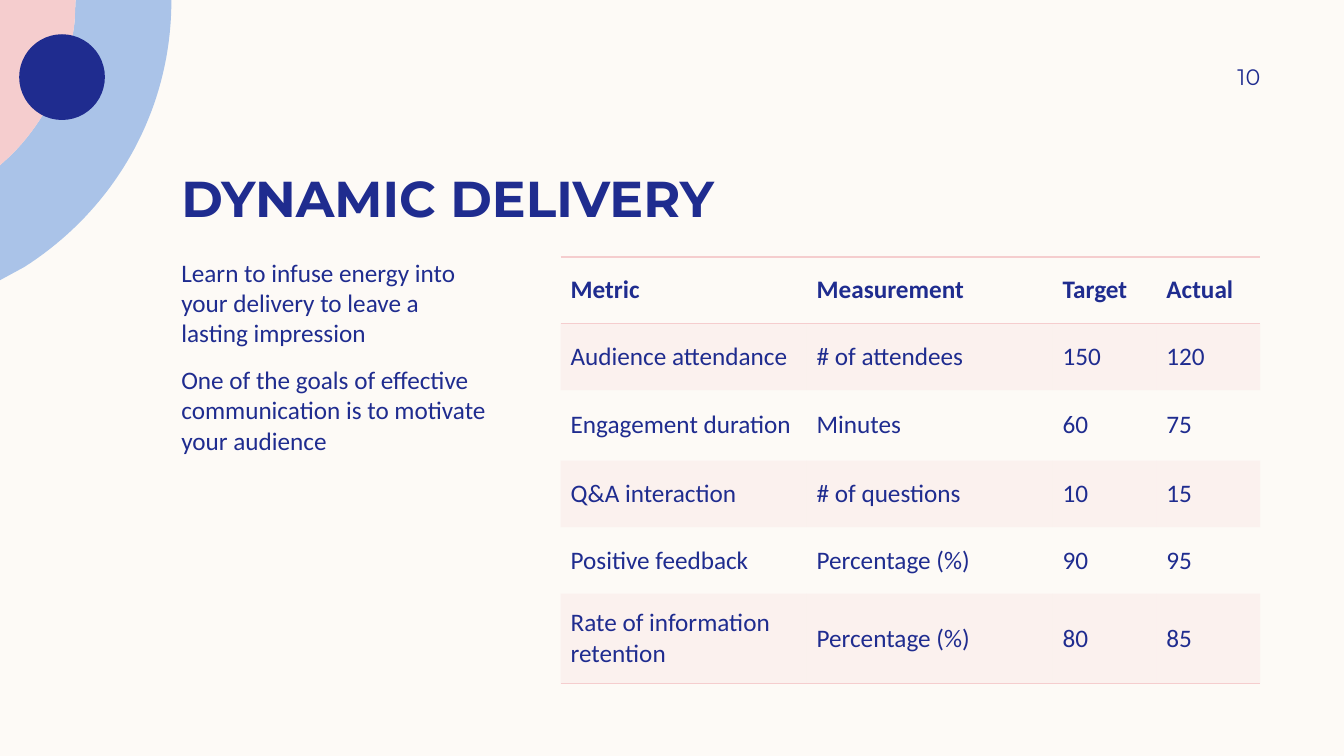
import pptx
import pptx.dml.color
import pptx.enum.shapes
import pptx.enum.text
import pptx.oxml
import pptx.oxml.ns
import pptx.util

Inches = pptx.util.Inches
Pt = pptx.util.Pt
RGBColor = pptx.dml.color.RGBColor
MSO_ANCHOR = pptx.enum.text.MSO_ANCHOR
PP_ALIGN = pptx.enum.text.PP_ALIGN

CREAM = RGBColor(0xFD, 0xFA, 0xF6)
NAVY = RGBColor(0x1F, 0x2C, 0x8F)
BLUE = RGBColor(0xAA, 0xC3, 0xE8)
PINK = RGBColor(0xF5, 0xCD, 0xCE)

TITLE = "DYNAMIC DELIVERY"
PAGE_NUMBER = "10"
BODY = [
    "Learn to infuse energy into your delivery to leave a lasting impression",
    "One of the goals of effective communication is to motivate your audience",
]
METRICS = [
    ("Metric", "Measurement", "Target", "Actual"),
    ("Audience attendance", "# of attendees", "150", "120"),
    ("Engagement duration", "Minutes", "60", "75"),
    ("Q&A interaction", "# of questions", "10", "15"),
    ("Positive feedback", "Percentage (%)", "90", "95"),
    ("Rate of information retention", "Percentage (%)", "80", "85"),
]
COLUMN_WIDTHS = [2.44, 2.44, 1.03, 1.03]
ROW_HEIGHTS = [0.66, 0.66, 0.7, 0.66, 0.66, 0.89]

OUTER_ARC = [(1.7, 0.01), (1.7, 1.12), (1.12, 2.09), (0.24, 2.65)]
INNER_ARC = [(0.74, 0.22), (0.68, 0.73), (0.46, 1.19), (0.11, 1.54)]
CURVE_STEPS = 40
NO_GRID_STYLE = "{2D5ABB26-0587-4C30-8999-92F81FD0307C}"


def curve_points(controls):
    points = []
    for step in range(CURVE_STEPS + 1):
        t = step / CURVE_STEPS
        weights = ((1 - t) ** 3, 3 * t * (1 - t) ** 2, 3 * t ** 2 * (1 - t), t ** 3)
        points.append(tuple(
            sum(weight * control[axis] for weight, control in zip(weights, controls))
            for axis in (0, 1)
        ))
    return points


def paint(shape, color):
    shape.shadow.inherit = False
    shape.fill.solid()
    shape.fill.fore_color.rgb = color
    shape.line.fill.background()


def add_outline(slide, points, color):
    corners = [(Inches(x), Inches(y)) for x, y in points]
    builder = slide.shapes.build_freeform(*corners[0])
    builder.add_line_segments(corners[1:], close=True)
    paint(builder.convert_to_shape(), color)


def add_run(paragraph, text, font, size, bold=False):
    run = paragraph.add_run()
    run.text = text
    run.font.name = font
    run.font.size = Pt(size)
    run.font.bold = bold
    run.font.color.rgb = NAVY


def add_text(slide, box, lines, font, size, bold=False, anchor=MSO_ANCHOR.TOP,
             align=PP_ALIGN.LEFT, space_after=0, right_inset=0.1):
    frame = slide.shapes.add_textbox(*map(Inches, box)).text_frame
    frame.word_wrap = True
    frame.vertical_anchor = anchor
    frame.margin_left, frame.margin_right = Inches(0.1), Inches(right_inset)
    frame.margin_top = frame.margin_bottom = 0
    for index, line in enumerate(lines):
        paragraph = frame.add_paragraph() if index else frame.paragraphs[0]
        paragraph.alignment = align
        paragraph.space_after = Pt(space_after)
        add_run(paragraph, line, font, size, bold)


def add_borders(cell, sides):
    properties = cell._tc.get_or_add_tcPr()
    for position, side in enumerate(sides):
        properties.insert(position, pptx.oxml.parse_xml(
            f'<a:ln{side} {pptx.oxml.ns.nsdecls("a")} w="12700"><a:solidFill>'
            f'<a:srgbClr val="{PINK}"/></a:solidFill></a:ln{side}>'
        ))


def fill_cell(cell, banded):
    if not banded:
        cell.fill.background()
        return
    cell.fill.solid()
    cell.fill.fore_color.rgb = PINK
    color = cell._tc.tcPr.find(".//" + pptx.oxml.ns.qn("a:srgbClr"))
    color.append(pptx.oxml.parse_xml(
        f'<a:alpha {pptx.oxml.ns.nsdecls("a")} val="20000"/>'
    ))


def add_metrics_table(slide):
    box = (5.56, 2.55, sum(COLUMN_WIDTHS), sum(ROW_HEIGHTS))
    table = slide.shapes.add_table(
        len(METRICS), len(COLUMN_WIDTHS), *map(Inches, box)).table
    table.horz_banding = False
    table._tbl.tblPr.find(pptx.oxml.ns.qn("a:tableStyleId")).text = NO_GRID_STYLE
    for column, width in zip(table.columns, COLUMN_WIDTHS):
        column.width = Inches(width)
    for row, height in zip(table.rows, ROW_HEIGHTS):
        row.height = Inches(height)
    borders = {0: "TB", len(METRICS) - 1: "B"}
    for row_index, values in enumerate(METRICS):
        for column_index, value in enumerate(values):
            cell = table.cell(row_index, column_index)
            cell.vertical_anchor = MSO_ANCHOR.MIDDLE
            add_run(cell.text_frame.paragraphs[0], value, "Calibri", 18, row_index == 0)
            fill_cell(cell, row_index % 2 == 1)
            add_borders(cell, borders.get(row_index, ""))


def main():
    presentation = pptx.Presentation()
    presentation.slide_width = Inches(13.33)
    presentation.slide_height = Inches(7.5)
    slide = presentation.slides.add_slide(presentation.slide_layouts[6])
    slide.background.fill.solid()
    slide.background.fill.fore_color.rgb = CREAM

    outer_edge = [(1.7, 0), *curve_points(OUTER_ARC), (0, 2.78)]
    inner_edge = [(0.75, 0), *curve_points(INNER_ARC), (0, 1.64)]
    add_outline(slide, outer_edge + inner_edge[::-1], BLUE)
    add_outline(slide, [(0, 0)] + inner_edge, PINK)
    dot = slide.shapes.add_shape(
        pptx.enum.shapes.MSO_SHAPE.OVAL, *map(Inches, (0.19, 0.34, 0.85, 0.85)))
    paint(dot, NAVY)

    add_text(slide, (1.7, 1.19, 10.8, 1.07), [TITLE], "Montserrat", 36,
             bold=True, anchor=MSO_ANCHOR.BOTTOM)
    add_text(slide, (1.7, 2.55, 3.25, 4.05), BODY, "Calibri", 18, space_after=12)
    add_metrics_table(slide)
    add_text(slide, (11.33, 0.5, 1.17, 0.52), [PAGE_NUMBER], "Montserrat", 16,
             anchor=MSO_ANCHOR.MIDDLE, align=PP_ALIGN.RIGHT, right_inset=0)
    presentation.save("out.pptx")


if __name__ == "__main__":
    main()
